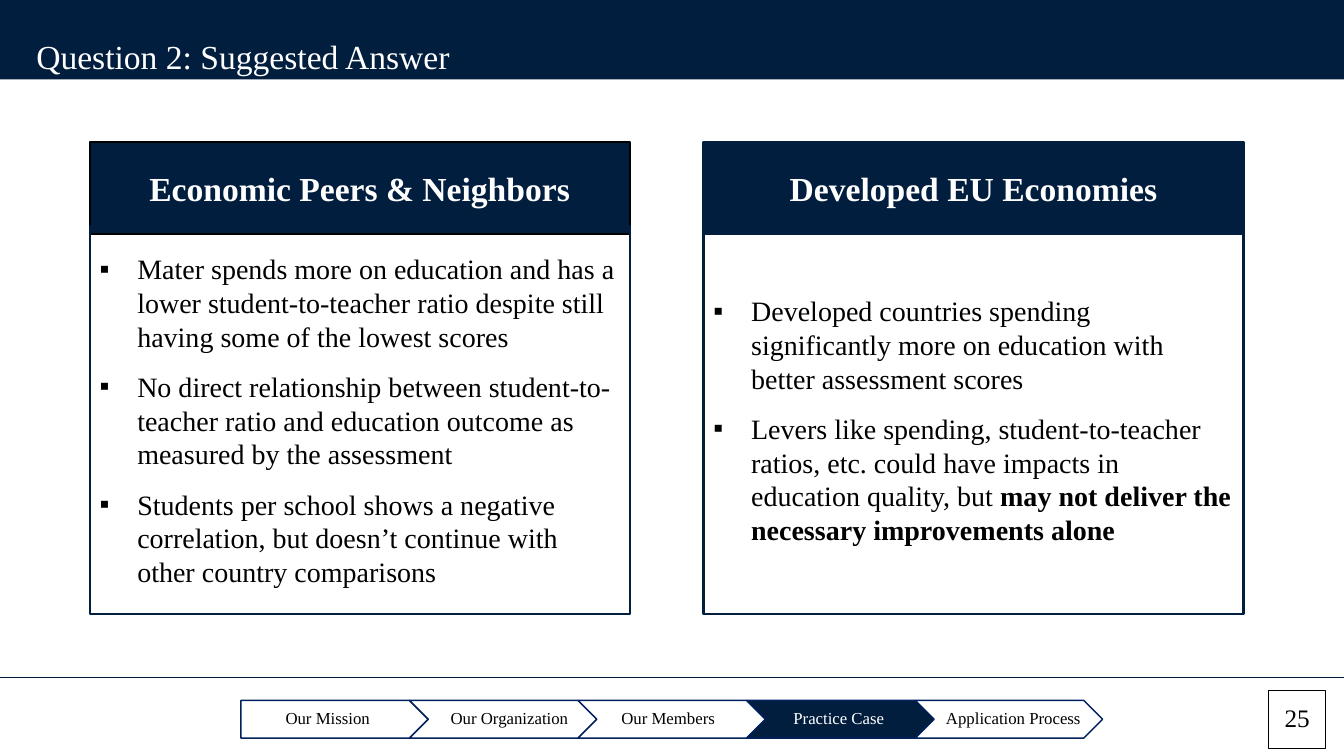
from dataclasses import dataclass

from lxml.etree import SubElement
from pptx import Presentation
from pptx.dml.color import RGBColor
from pptx.enum.shapes import MSO_CONNECTOR, MSO_SHAPE
from pptx.enum.text import MSO_ANCHOR, MSO_AUTO_SIZE, PP_ALIGN
from pptx.oxml.ns import qn
from pptx.util import Cm, Pt


@dataclass(frozen=True)
class Theme:
    font: str = "Times New Roman"
    navy: RGBColor = RGBColor(0x02, 0x1E, 0x3E)
    card_navy: RGBColor = RGBColor(0x01, 0x1E, 0x3E)
    step_line: RGBColor = RGBColor(0x00, 0x20, 0x60)
    black: RGBColor = RGBColor(0, 0, 0)
    white: RGBColor = RGBColor(255, 255, 255)
    heading: Pt = Pt(24)
    body: Pt = Pt(20)
    number: Pt = Pt(18)
    step: Pt = Pt(12)


THEME = Theme()
SLIDE_W, SLIDE_H = 33.87, 19.05

# Each paragraph is a list of (text, bold) runs.
PEERS = [
    [("Mater spends more on education and has a lower student-to-teacher ratio "
      "despite still having some of the lowest scores", False)],
    [("No direct relationship between student-to-teacher ratio and education "
      "outcome as measured by the assessment", False)],
    [("Students per school shows a negative correlation, but doesn’t continue "
      "with other country comparisons", False)],
]
DEVELOPED = [
    [("Developed countries spending significantly more on education with better "
      "assessment scores", False)],
    [("Levers like spending, student-to-teacher ratios, etc. could have impacts "
      "in education quality, but ", False),
     ("may not deliver the necessary improvements alone", True)],
]
# Label and its sideways shift from the middle of the arrow.
STEPS = [("Our Mission", -0.17), ("Our Organization", 0.16), ("Our Members", -0.09),
         ("Practice Case", -0.04), ("Application Process", 0.11)]
CURRENT_STEP = "Practice Case"


def add_box(slide, kind, box, fill=None, line=None, weight=1.0):
    shape = slide.shapes.add_shape(kind, *map(Cm, box))
    shape.shadow.inherit = False
    if fill is None:
        shape.fill.background()
    else:
        shape.fill.solid()
        shape.fill.fore_color.rgb = fill
    if line is None:
        shape.line.fill.background()
    else:
        shape.line.color.rgb = line
        shape.line.width = Pt(weight)
    return shape


def add_run(paragraph, text, size, color, bold=False):
    run = paragraph.add_run()
    run.text = text
    run.font.name = THEME.font
    run.font.size = size
    run.font.bold = bold
    run.font.color.rgb = color


def write_centred(shape, text, size, color, bold=False, spacing=1.0):
    frame = shape.text_frame
    frame.word_wrap = True
    frame.vertical_anchor = MSO_ANCHOR.MIDDLE
    paragraph = frame.paragraphs[0]
    paragraph.alignment = PP_ALIGN.CENTER
    paragraph.line_spacing = spacing
    add_run(paragraph, text, size, color, bold)


def add_bullet(paragraph, indent):
    properties = paragraph._p.get_or_add_pPr()
    properties.set("marL", str(Cm(indent)))
    properties.set("indent", str(-Cm(indent)))
    color = SubElement(properties, qn("a:buClr"))
    SubElement(color, qn("a:srgbClr"), val=str(THEME.black))
    SubElement(properties, qn("a:buFont"), typeface=THEME.font)
    SubElement(properties, qn("a:buChar"), char="▪")


def add_title_bar(slide, box, text):
    left, top, width, height = box
    add_box(slide, MSO_SHAPE.RECTANGLE, box, THEME.navy)
    title = slide.shapes.title
    slide.shapes.element.append(title.element)  # brings the title above the bar
    title.left, title.top = Cm(left + 0.66), Cm(top + 0.89)
    title.width, title.height = Cm(23.85), Cm(height - 0.78)
    frame = title.text_frame
    frame.word_wrap = True
    frame.auto_size = MSO_AUTO_SIZE.NONE
    frame.vertical_anchor = MSO_ANCHOR.TOP
    paragraph = frame.paragraphs[0]
    paragraph.alignment = PP_ALIGN.LEFT
    paragraph.line_spacing = 0.9
    add_run(paragraph, text, THEME.heading, THEME.white)


def add_card(slide, box, heading, points, heading_line):
    """Place a filled heading over an outlined list, overlapping slightly."""
    left, top, width, height = box
    heading_height, overlap = 2.31, 0.2
    header = add_box(slide, MSO_SHAPE.RECTANGLE, (left, top, width, heading_height),
                     THEME.card_navy, heading_line, 1.5)
    write_centred(header, heading, THEME.heading, THEME.white, bold=True)

    body_offset = heading_height - overlap
    body = add_box(slide, MSO_SHAPE.RECTANGLE,
                   (left, top + body_offset, width, height - body_offset),
                   line=THEME.card_navy, weight=1.5)
    frame = body.text_frame
    frame.word_wrap = True
    frame.vertical_anchor = MSO_ANCHOR.MIDDLE
    for index, runs in enumerate(points):
        paragraph = frame.add_paragraph() if index else frame.paragraphs[0]
        add_bullet(paragraph, 0.95)
        paragraph.alignment = PP_ALIGN.LEFT
        if index:
            paragraph.space_before = Pt(12)
        for text, bold in runs:
            add_run(paragraph, text, THEME.body, THEME.black, bold)


def add_step_trail(slide, box):
    left, top, width, height = box
    step_width, label_width, label_height = 4.72, 4.29, 0.69
    pitch = (width - step_width) / (len(STEPS) - 1)
    for index, (label, shift) in enumerate(STEPS):
        current = label == CURRENT_STEP
        step_left = left + index * pitch
        kind = MSO_SHAPE.CHEVRON if index else MSO_SHAPE.PENTAGON
        add_box(slide, kind, (step_left, top, step_width, height),
                THEME.navy if current else THEME.white, THEME.step_line)
        label_left = step_left + (step_width - label_width) / 2 + shift
        caption = slide.shapes.add_textbox(Cm(label_left), Cm(top + 0.15),
                                           Cm(label_width), Cm(label_height))
        write_centred(caption, label, THEME.step,
                      THEME.white if current else THEME.black, spacing=0.8)


def add_footer(slide, box, number):
    left, top, width, height = box
    rule = slide.shapes.add_connector(MSO_CONNECTOR.STRAIGHT, Cm(left), Cm(top),
                                      Cm(left + width), Cm(top))
    rule.line.color.rgb = THEME.navy
    rule.line.width = Pt(1)
    SubElement(rule.element.spPr, qn("a:effectLst"))
    add_step_trail(slide, (left + 6.07, top + 0.58, 21.72, 0.95))
    page = add_box(slide, MSO_SHAPE.RECTANGLE,
                   (left + width - 1.89, top + 0.33, 1.42, 1.47),
                   line=THEME.black, weight=0.75)
    write_centred(page, number, THEME.number, THEME.black, spacing=0.9)


def main():
    deck = Presentation()
    deck.slide_width, deck.slide_height = Cm(SLIDE_W), Cm(SLIDE_H)
    slide = deck.slides.add_slide(deck.slide_layouts.get_by_name("Title Only"))
    add_title_bar(slide, (0, 0, SLIDE_W, 2), "Question 2: Suggested Answer")
    add_card(slide, (2.26, 3.58, 13.61, 11.89), "Economic Peers & Neighbors",
             PEERS, THEME.black)
    add_card(slide, (17.73, 3.58, 13.61, 11.89), "Developed EU Economies",
             DEVELOPED, THEME.card_navy)
    add_footer(slide, (0, 17.07, SLIDE_W, SLIDE_H - 17.07), "25")
    deck.save("out.pptx")


if __name__ == "__main__":
    main()
